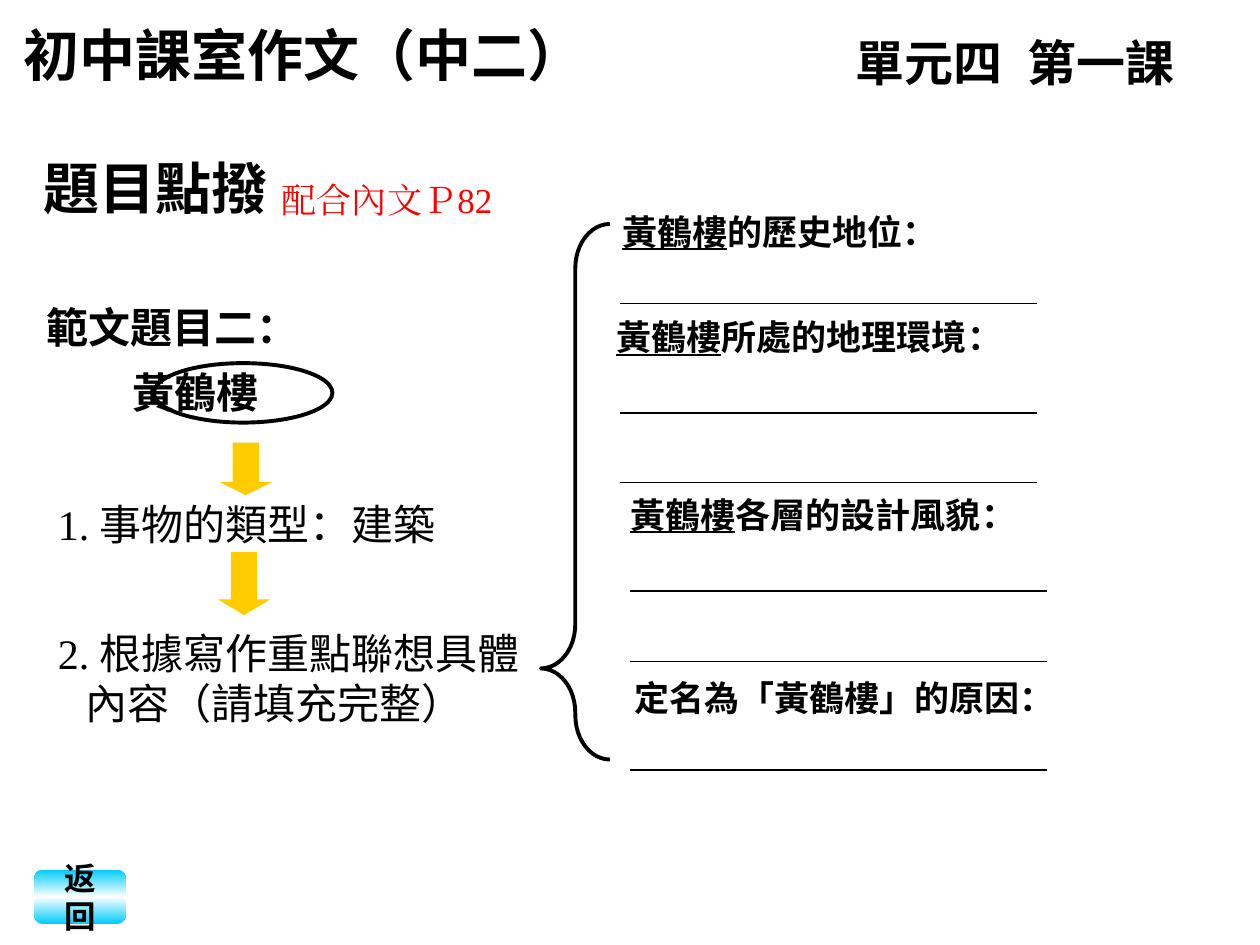
from dataclasses import dataclass

from lxml import etree
from pptx import Presentation
from pptx import util as u
from pptx.dml.color import RGBColor
from pptx.enum import shapes, text
from pptx.oxml import ns

Pt = u.Pt
SHAPE = shapes.MSO_SHAPE
CENTER = text.PP_ALIGN.CENTER


@dataclass(frozen=True)
class Theme:
    ink: str = "000000"
    note: str = "FF0000"
    arrow: str = "FFCC00"
    button: str = "00CCFF"
    white: str = "FFFFFF"
    title: int = 32
    lesson: int = 28
    body: int = 24
    detail: int = 20
    label: int = 18
    heading_font: str = "Karla"
    bold_font: str = "Arial"
    body_font: str = "DejaVu Sans"
    number_font: str = "Times New Roman"
    outline: float = 2.25
    rule: float = 1


class LessonSlide:
    def __init__(self, slide, theme):
        self.slide = slide
        self.theme = theme

    def set_typeface(self, font, name):
        font.name = name
        east_asian = etree.SubElement(font._element, ns.qn("a:ea"))
        east_asian.set("typeface", name)

    def fill_paragraph(self, paragraph, runs, size, font=None, color=None,
                       bold=False, indent=0):
        if indent:
            paragraph._p.get_or_add_pPr().set("marL", str(Pt(indent)))
        paragraph.font.size = Pt(size)
        paragraph.font.bold = bold
        paragraph.font.color.rgb = RGBColor.from_string(color or self.theme.ink)
        if font:
            self.set_typeface(paragraph.font, font)
        for words, style in runs:
            run = paragraph.add_run()
            run.text = words
            if "font" in style:
                self.set_typeface(run.font, style["font"])
            if "underline" in style:
                run.font.underline = style["underline"]

    def text_box(self, left, top, width, height, lines, size, font=None,
                 color=None, bold=False, align=None, spacing=None, wrap=True):
        box = self.slide.shapes.add_textbox(Pt(left), Pt(top), Pt(width), Pt(height))
        frame = box.text_frame
        frame.word_wrap = wrap
        frame.auto_size = text.MSO_AUTO_SIZE.SHAPE_TO_FIT_TEXT
        for index, (runs, indent) in enumerate(lines):
            paragraph = frame.add_paragraph() if index else frame.paragraphs[0]
            paragraph.alignment = align
            paragraph.line_spacing = spacing
            self.fill_paragraph(paragraph, runs, size, font, color, bold, indent)

    def heading(self, left, top, width, height, words, size, font, color=None, bold=True):
        self.text_box(left, top, width, height, [([(words, {})], 0)],
                      size, font, color, bold)

    def step(self, top, width, height, number, words, continuation=None):
        theme = self.theme
        lines = [([(number + " ", {"font": theme.number_font}),
                   (words, {"font": theme.body_font})], 0)]
        if continuation:
            lines.append(([(continuation, {"font": theme.body_font})], 16))
        self.text_box(26, top, width, height, lines, theme.body)

    def prompt(self, left, top, width, subject, words, wrap=True):
        runs = [(subject, {"underline": True})] if subject else []
        runs.append((words, {}))
        self.text_box(left, top, width, 31, [(runs, 0)], self.theme.detail,
                      self.theme.bold_font, bold=True, align=CENTER, wrap=wrap)

    def shape(self, kind, left, top, width, height, fill=None, line=None, adjustments=()):
        shape = self.slide.shapes.add_shape(kind, Pt(left), Pt(top), Pt(width), Pt(height))
        shape.shadow.inherit = False
        for index, value in enumerate(adjustments):
            shape.adjustments[index] = value
        if fill:
            shape.fill.solid()
            shape.fill.fore_color.rgb = RGBColor.from_string(fill)
        else:
            shape.fill.background()
        if line:
            shape.line.color.rgb = RGBColor.from_string(line)
            shape.line.width = Pt(self.theme.outline)
        else:
            shape.line.fill.background()
        return shape

    def answer_line(self, left, top):
        line = self.slide.shapes.add_connector(
            shapes.MSO_CONNECTOR.STRAIGHT, Pt(left), Pt(top), Pt(left + 238.3), Pt(top))
        line.line.color.rgb = RGBColor.from_string(self.theme.ink)
        line.line.width = Pt(self.theme.rule)
        etree.SubElement(line._element.spPr, ns.qn("a:effectLst"))

    def button(self, left, top, width, height, words):
        theme = self.theme
        shape = self.shape(SHAPE.FLOWCHART_ALTERNATE_PROCESS, left, top, width, height)
        shape.fill.gradient()
        shape.fill.gradient_angle = 270
        stops = shape._element.spPr.find(ns.qn("a:gradFill")).find(ns.qn("a:gsLst"))
        for stop in list(stops):
            stops.remove(stop)
        for position, color in ((0, theme.button), (50, theme.white), (100, theme.button)):
            stop = etree.SubElement(stops, ns.qn("a:gs"), pos=str(position * 1000))
            etree.SubElement(stop, ns.qn("a:srgbClr"), val=color)
        frame = shape.text_frame
        frame.word_wrap = True
        frame.vertical_anchor = text.MSO_ANCHOR.MIDDLE
        paragraph = frame.paragraphs[0]
        paragraph.alignment = CENTER
        self.fill_paragraph(paragraph, [(words, {})], theme.label, theme.bold_font, bold=True)


def main():
    presentation = Presentation()
    presentation.slide_width = Pt(720)
    presentation.slide_height = Pt(540)
    slide = presentation.slides.add_slide(presentation.slide_layouts[6])
    theme = Theme()
    lesson = LessonSlide(slide, theme)

    lesson.text_box(19.5, 160, 360, 119.5,
                    [([("範文題目二：", {})], 0), ([("黃鶴樓", {})], 49)],
                    theme.body, theme.body_font, bold=True, spacing=1.3)
    lesson.heading(6.5, 8, 376, 45.5, "初中課室作文（中二）", theme.title, theme.heading_font)
    lesson.heading(18, 84, 222, 45.5, "題目點撥", theme.title, theme.bold_font)
    lesson.heading(482, 15, 241, 41, "單元四  第一課", theme.lesson, theme.heading_font)
    lesson.heading(154, 98.5, 178, 31, "配合內文Ｐ82", theme.detail, theme.number_font,
                   theme.note, bold=False)

    lesson.step(355, 300, 65, "2.", "根據寫作重點聯想具體", "內容（請填充完整）")
    lesson.step(281.5, 357, 36, "1.", "事物的類型：建築")

    lesson.shape(SHAPE.DOWN_ARROW, 125.5, 253, 30, 30, theme.arrow, adjustments=(0.5, 0.25))
    lesson.shape(SHAPE.DOWN_ARROW, 124.5, 315.5, 30, 36, theme.arrow, adjustments=(0.5, 0.3))
    lesson.shape(SHAPE.OVAL, 88, 207.5, 102, 34, line=theme.ink)
    lesson.shape(SHAPE.LEFT_BRACE, 309, 128, 39.5, 306, line=theme.ink,
                 adjustments=(0.64, 0.83))

    for left, tops in ((354.3, (173.5, 236, 275.75)), (360, (337.75, 378, 440))):
        for top in tops:
            lesson.answer_line(left, top)

    lesson.prompt(348.5, 116.5, 194.5, "黃鶴樓", "的歷史地位：")
    lesson.prompt(345, 177, 235, "黃鶴樓", "所處的地理環境：", wrap=False)
    lesson.prompt(351.5, 278.5, 238, "黃鶴樓", "各層的設計風貌：")
    lesson.prompt(348.5, 383, 268.5, "", "定名為「黃鶴樓」的原因：")

    lesson.button(19.5, 497, 52.5, 31, "返回")
    presentation.save("out.pptx")


if __name__ == "__main__":
    main()
